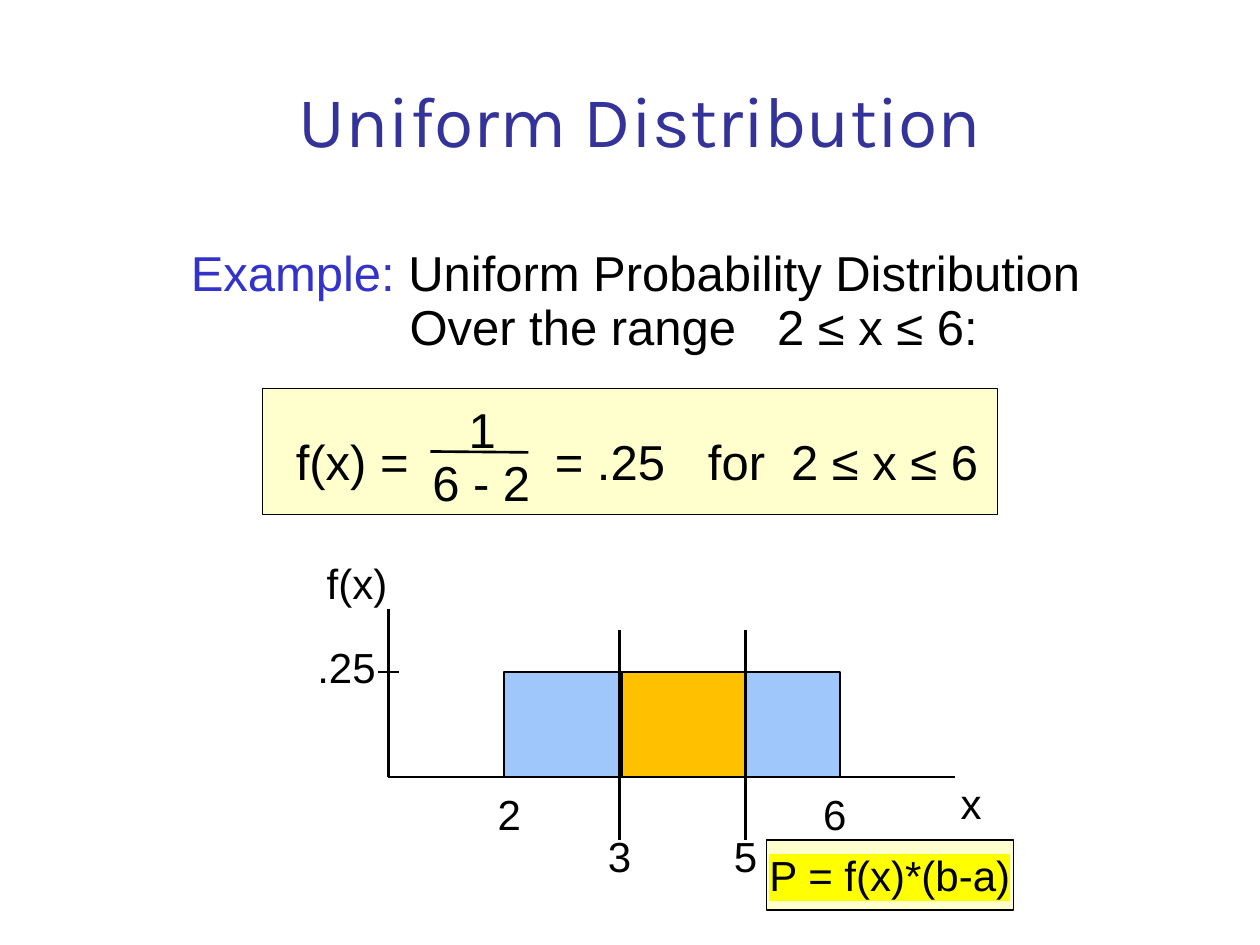
from dataclasses import dataclass

from lxml.etree import SubElement
from pptx import Presentation
from pptx.dml.color import RGBColor
from pptx.enum.shapes import MSO_CONNECTOR, MSO_SHAPE
from pptx.enum.text import MSO_ANCHOR, PP_ALIGN
from pptx.oxml.ns import qn
from pptx.util import Pt

BLACK = RGBColor(0x00, 0x00, 0x00)
NAVY = RGBColor(0x33, 0x33, 0x99)
BLUE = RGBColor(0x33, 0x33, 0xCC)
CREAM = RGBColor(0xFF, 0xFF, 0xCD)
LIGHT_BLUE = RGBColor(0xA0, 0xC7, 0xFC)
ORANGE = RGBColor(0xFF, 0xC0, 0x00)
YELLOW = RGBColor(0xFF, 0xFF, 0x00)

# Levels shared by the parts of the graph
AXIS_X, AXIS_Y = 222, 444
DENSITY_Y = 384
BOUND_A, BOUND_B = 354, 426


@dataclass
class Box:
    left: float
    top: float
    width: float
    height: float

    def lengths(self) -> tuple:
        return Pt(self.left), Pt(self.top), Pt(self.width), Pt(self.height)


@dataclass
class Line:
    start: tuple[float, float]
    end: tuple[float, float]


@dataclass
class Label:
    text: str
    box: Box
    size: float = 24


def add_run(paragraph, text: str, size: float, color: RGBColor = BLACK, font_name: str = "Arial"):
    run = paragraph.add_run()
    run.text = text
    run.font.size = Pt(size)
    run.font.name = font_name
    run.font.color.rgb = color
    return run


def add_rectangle(slide, box: Box, fill: RGBColor, line_width: float):
    shape = slide.shapes.add_shape(MSO_SHAPE.RECTANGLE, *box.lengths())
    shape.shadow.inherit = False
    shape.fill.solid()
    shape.fill.fore_color.rgb = fill
    shape.line.color.rgb = BLACK
    shape.line.width = Pt(line_width)
    return shape


def add_line(slide, line: Line) -> None:
    begin_x, begin_y = line.start
    end_x, end_y = line.end
    connector = slide.shapes.add_connector(
        MSO_CONNECTOR.STRAIGHT, Pt(begin_x), Pt(begin_y), Pt(end_x), Pt(end_y))
    connector.line.color.rgb = BLACK
    connector.line.width = Pt(1.5)
    SubElement(connector._element.spPr, qn("a:effectLst"))


def add_text_frame(slide, box: Box):
    frame = slide.shapes.add_textbox(*box.lengths()).text_frame
    frame.word_wrap = True
    frame.margin_top = Pt(6.5)
    return frame


def add_label(slide, label: Label) -> None:
    frame = add_text_frame(slide, label.box)
    frame.margin_left = frame.margin_right = 0
    paragraph = frame.paragraphs[0]
    paragraph.alignment = PP_ALIGN.CENTER
    add_run(paragraph, label.text, label.size)


def set_tabs(paragraph, *positions: float) -> None:
    tab_list = SubElement(paragraph._p.get_or_add_pPr(), qn("a:tabLst"))
    for position in positions:
        SubElement(tab_list, qn("a:tab"), pos=str(Pt(position)), algn="l")


def set_highlight(run, color: RGBColor) -> None:
    """Put the highlight right after the fill, as the schema orders it."""
    properties = run._r.get_or_add_rPr()
    highlight = SubElement(properties, qn("a:highlight"))
    SubElement(highlight, qn("a:srgbClr"), val=str(color))
    properties.find(qn("a:solidFill")).addnext(highlight)


def add_title(slide) -> None:
    frame = add_text_frame(slide, Box(60, 36, 612, 60))
    frame.margin_top = Pt(3.6)
    frame.vertical_anchor = MSO_ANCHOR.BOTTOM
    paragraph = frame.paragraphs[0]
    paragraph.alignment = PP_ALIGN.CENTER
    add_run(paragraph, "Uniform Distribution", 41, NAVY, "Karla")


def add_example(slide) -> None:
    frame = add_text_frame(slide, Box(102, 132, 546, 71))
    first = frame.paragraphs[0]
    add_run(first, "Example:", 28, BLUE)
    add_run(first, " Uniform Probability Distribution", 28)
    second = frame.add_paragraph()
    second.line_spacing = 0.94
    set_tabs(second, 125, 335)
    add_run(second, "\tOver the range\t2 ≤ x ≤ 6:", 28)


def add_formula(slide) -> None:
    frame = add_text_frame(slide, Box(162, 240, 510, 41))
    paragraph = frame.paragraphs[0]
    set_tabs(paragraph, 148, 235.5, 283)
    add_run(paragraph, "f(x) =\t= .25\tfor\t2 ≤ x ≤ 6", 28)
    add_label(slide, Label("6 - 2", Box(236, 252, 78, 41), 28))
    add_label(slide, Label("1", Box(258, 222, 35, 41), 28))
    add_line(slide, Line((246, 258), (302, 258.5)))


def add_graph(slide) -> None:
    height = AXIS_Y - DENSITY_Y
    add_line(slide, Line((AXIS_X, 348), (AXIS_X, AXIS_Y)))
    add_line(slide, Line((AXIS_X, AXIS_Y), (546, AXIS_Y)))
    add_rectangle(slide, Box(288, DENSITY_Y, 192, height), LIGHT_BLUE, 1.5)
    add_line(slide, Line((216, DENSITY_Y), (228, DENSITY_Y)))
    for bound in (BOUND_A, BOUND_B):
        add_line(slide, Line((bound, 360), (bound, 480)))
    labels = [
        Label("2", Box(276, AXIS_Y, 30, 36)),
        Label("6", Box(462, AXIS_Y, 30, 36)),
        Label("3", Box(BOUND_A - 15, 468, 30, 36)),
        Label("5", Box(BOUND_B - 15, 468, 30, 36)),
        Label(".25", Box(174, 360, 48, 36)),
        Label("x", Box(540, 438, 30, 36)),
        Label("f(x)", Box(174, 312, 60, 36)),
    ]
    for label in labels:
        add_label(slide, label)
    left = BOUND_A + 1.5
    add_rectangle(slide, Box(left, DENSITY_Y, BOUND_B - left, height), ORANGE, 1.5)


def add_probability_rule(slide) -> None:
    shape = add_rectangle(slide, Box(438, 480, 141, 40), CREAM, 0.75)
    frame = shape.text_frame
    frame.word_wrap = False
    frame.vertical_anchor = MSO_ANCHOR.MIDDLE
    paragraph = frame.paragraphs[0]
    paragraph.alignment = PP_ALIGN.CENTER
    set_highlight(add_run(paragraph, "P = f(x)*(b-a)", 24), YELLOW)


def main() -> None:
    presentation = Presentation()
    presentation.slide_width = Pt(720)
    presentation.slide_height = Pt(540)
    slide = presentation.slides.add_slide(presentation.slide_layouts[6])
    add_rectangle(slide, Box(150, 222, 420, 72), CREAM, 0.75)
    add_title(slide)
    add_example(slide)
    add_formula(slide)
    add_graph(slide)
    add_probability_rule(slide)
    presentation.save("out.pptx")


if __name__ == "__main__":
    main()
